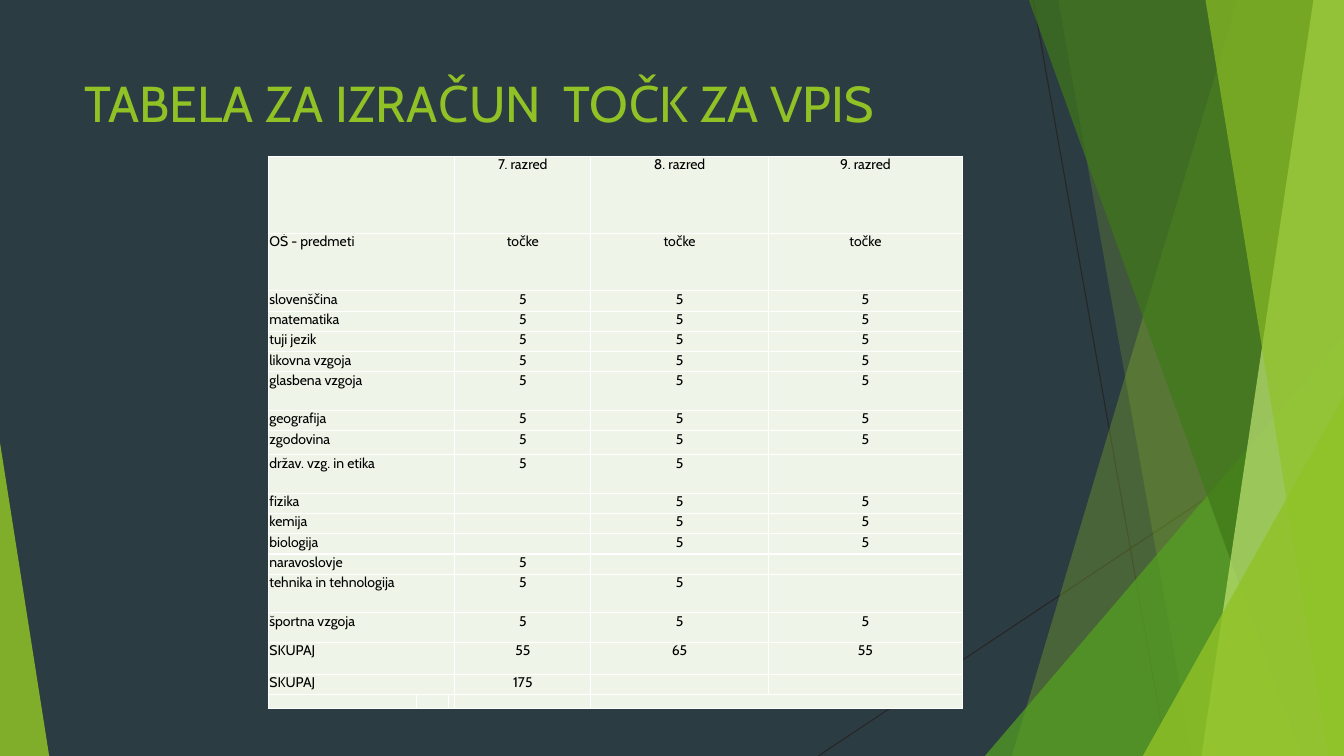
from lxml import etree
from pptx import Presentation
from pptx.dml.color import RGBColor
from pptx.enum.shapes import MSO_CONNECTOR, MSO_SHAPE
from pptx.enum.text import MSO_ANCHOR, PP_ALIGN as Align
from pptx.oxml.ns import qn
from pptx.util import Cm, Pt

# Content
TITLE = "TABELA ZA IZRAČUN  TOČK ZA VPIS"
FONT = "Cabin"
# Row height in cm, subject, points in years 7, 8 and 9
ROWS = [
    (1.94, "", "7. razred", "8. razred", "9. razred"),
    (1.45, "OŠ - predmeti", "točke", "točke", "točke"),
    (0.51, "slovenščina", "5", "5", "5"),
    (0.51, "matematika", "5", "5", "5"),
    (0.51, "tuji jezik", "5", "5", "5"),
    (0.51, "likovna vzgoja", "5", "5", "5"),
    (0.97, "glasbena vzgoja", "5", "5", "5"),
    (0.51, "geografija", "5", "5", "5"),
    (0.51, "zgodovina", "5", "5", "5"),
    (0.61, "držav. vzg. in etika", "5", "5", ""),
    (0.51, "fizika", "", "5", "5"),
    (0.51, "kemija", "", "5", "5"),
    (0.51, "biologija", "", "5", "5"),
    (0.51, "naravoslovje", "5", "", ""),
    (0.97, "tehnika in tehnologija", "5", "5", ""),
    (0.74, "športna vzgoja", "5", "5", "5"),
    (0.81, "SKUPAJ", "55", "65", "55"),
    (0.51, "SKUPAJ", "175", "", ""),
    (0.36, "", "", "", ""),
]
ROWS[9] = (0.97, *ROWS[9][1:])
ROWS[8] = (0.61, *ROWS[8][1:])
COLUMN_WIDTHS = [3.73, 0.81, 0.15, 3.43, 4.47, 4.9]
TABLE_LEFT, TABLE_TOP = 6.76, 3.94
SUBJECT_COLUMNS = 3

# Decoration, back to front, in cm
WIDTH, HEIGHT = 33.87, 19.05
LINES = [(26.04, 0, 29.41, HEIGHT), (WIDTH, 10.24, 20.62, HEIGHT)]
# Bands reach the right edge: (top x, bottom x)
# Triangles stand on the bottom edge: (left, top, width, apex position)
FACETS = [
    ("band", (31.19, 25.5), "90C226", 30),
    ("band", (26.67, 30.05), "90C226", 20),
    ("triangle", (24.82, 8.46, 9.05, 1), "54A021", 72),
    ("band", (25.93, 32.79), "3F7819", 70),
    ("band", (33.1, 30.28), "C0E474", 70),
    ("band", (30.38, 33.48), "90C226", 65),
    ("triangle", (28.8, 9.98, 5.07, 1), "90C226", 80),
    ("triangle", (0, 11.15, 1.24, 0), "90C226", 85),
]


def paint(target, color, opacity=100):
    """Give a fill or a line's fill a solid colour."""
    target.solid()
    target.fore_color.rgb = RGBColor.from_string(color)
    if opacity < 100:
        tint = target._xPr.find(".//" + qn("a:srgbClr"))
        etree.SubElement(tint, qn("a:alpha"), val=str(opacity * 1000))


def style_run(run, size, color):
    run.font.name = FONT
    run.font.size = Pt(size)
    paint(run.font.fill, color)


def add_line(slide, ends):
    line = slide.shapes.add_connector(
        MSO_CONNECTOR.STRAIGHT, *[Cm(value) for value in ends])
    paint(line.line.fill, "262626")
    line.line.width = Pt(0.75)
    etree.SubElement(line._element.spPr, qn("a:effectLst"))


def add_band(slide, top_x, bottom_x):
    builder = slide.shapes.build_freeform(Cm(top_x), 0)
    corners = [(WIDTH, 0), (WIDTH, HEIGHT), (bottom_x, HEIGHT)]
    builder.add_line_segments([(Cm(x), Cm(y)) for x, y in corners], close=True)
    return builder.convert_to_shape()


def add_triangle(slide, left, top, width, apex):
    shape = slide.shapes.add_shape(
        MSO_SHAPE.ISOSCELES_TRIANGLE,
        Cm(left), Cm(top), Cm(width), Cm(HEIGHT - top))
    shape.adjustments[0] = apex
    return shape


def style_cell(cell, text, align):
    properties = cell._tc.get_or_add_tcPr()
    for side in ("lnL", "lnR", "lnT", "lnB"):
        border = etree.SubElement(properties, qn("a:" + side), w=str(Pt(1)))
        fill = etree.SubElement(border, qn("a:solidFill"))
        etree.SubElement(fill, qn("a:srgbClr"), val="FFFFFF")
    paint(cell.fill, "EEF4E8")
    cell.margin_left = cell.margin_right = Cm(0.03)
    cell.margin_top = cell.margin_bottom = 0
    paragraph = cell.text_frame.paragraphs[0]
    paragraph.alignment = align
    if text:
        paragraph.text = text
        style_run(paragraph.runs[0], 10, "000000")
    else:
        # A small size keeps empty cells from stretching their row
        etree.SubElement(paragraph._p, qn("a:endParaRPr"), sz="600")


def add_points_table(slide):
    heights = [row[0] for row in ROWS]
    frame = slide.shapes.add_table(
        len(ROWS), len(COLUMN_WIDTHS), Cm(TABLE_LEFT), Cm(TABLE_TOP),
        Cm(sum(COLUMN_WIDTHS)), Cm(sum(heights)))
    table = frame.table
    table.first_row = table.horz_banding = False
    for column, width in zip(table.columns, COLUMN_WIDTHS):
        column.width = Cm(width)
    last = len(ROWS) - 1
    for index, (height, subject, *points) in enumerate(ROWS):
        table.rows[index].height = Cm(height)
        texts = [subject] + [""] * (SUBJECT_COLUMNS - 1) + points
        for column, text in enumerate(texts):
            align = Align.LEFT if column < SUBJECT_COLUMNS else Align.CENTER
            style_cell(table.cell(index, column), text, align)
        first, end = (4, 5) if index == last else (0, SUBJECT_COLUMNS - 1)
        table.cell(index, first).merge(table.cell(index, end))


def add_title(slide):
    box = slide.shapes.add_textbox(Cm(1.88), Cm(1.7), Cm(23.88), Cm(3.66))
    text_frame = box.text_frame
    text_frame.word_wrap = True
    text_frame.vertical_anchor = MSO_ANCHOR.TOP
    text_frame.text = TITLE
    style_run(text_frame.paragraphs[0].runs[0], 36, "90C226")


def main():
    presentation = Presentation()
    presentation.slide_width = Cm(WIDTH)
    presentation.slide_height = Cm(HEIGHT)
    slide = presentation.slides.add_slide(presentation.slide_layouts[6])
    paint(slide.background.fill, "2C3C43")

    # Decoration
    for ends in LINES:
        add_line(slide, ends)
    builders = {"band": add_band, "triangle": add_triangle}
    for kind, geometry, color, opacity in FACETS:
        shape = builders[kind](slide, *geometry)
        paint(shape.fill, color, opacity)
        shape.line.fill.background()
        shape.shadow.inherit = False

    # Title and table
    add_title(slide)
    add_points_table(slide)
    presentation.save("out.pptx")


if __name__ == "__main__":
    main()
